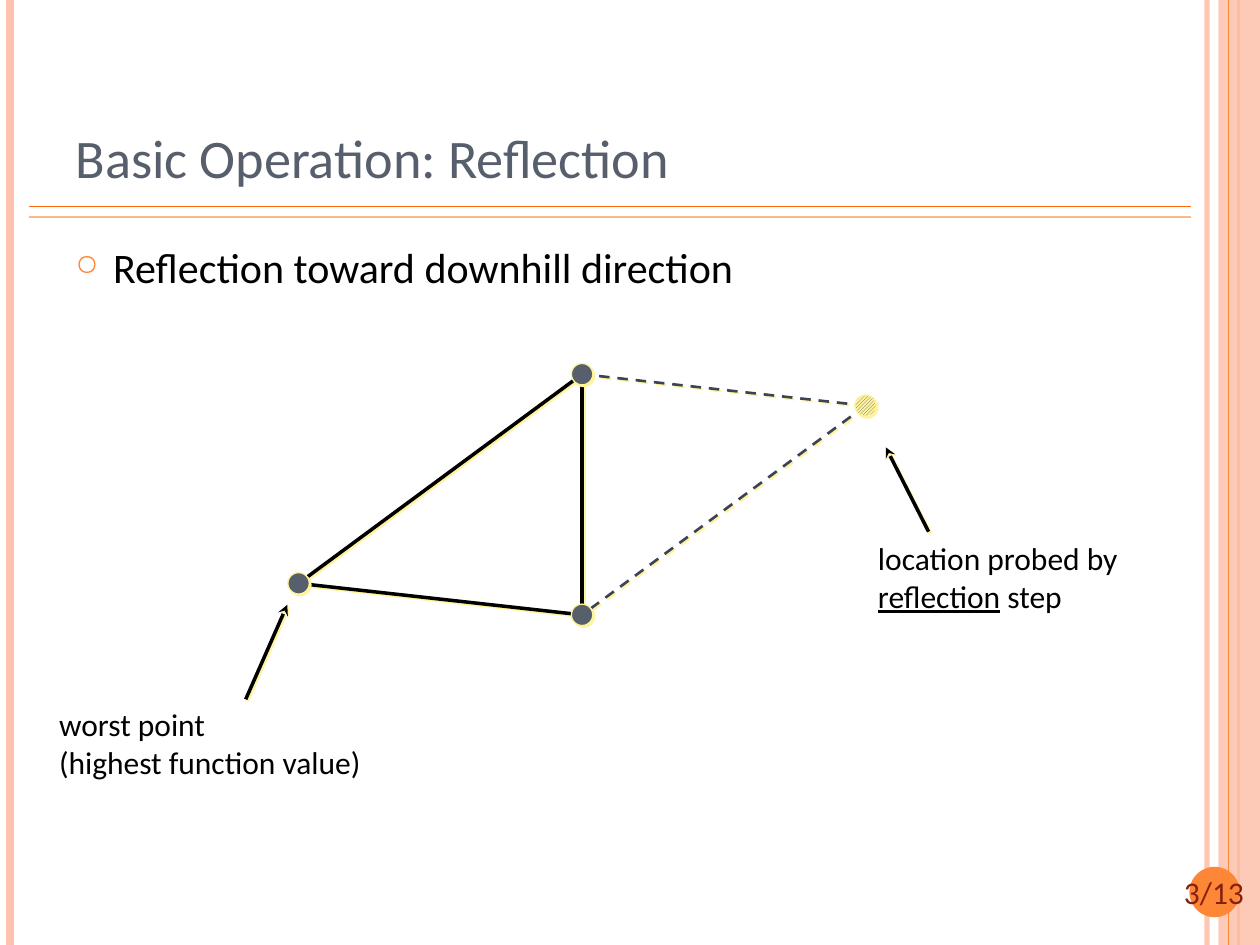
from dataclasses import dataclass

from lxml import etree
from pptx import Presentation
from pptx.dml.color import RGBColor
from pptx.enum.dml import MSO_LINE, MSO_PATTERN
from pptx.enum.shapes import MSO_CONNECTOR, MSO_SHAPE
from pptx.enum.text import MSO_ANCHOR, MSO_AUTO_SIZE, PP_ALIGN
from pptx.oxml.ns import qn
from pptx.util import Inches, Pt

STRAIGHT = MSO_CONNECTOR.STRAIGHT
OVAL, RECTANGLE = MSO_SHAPE.OVAL, MSO_SHAPE.RECTANGLE
DASH = MSO_LINE.DASH
HATCH = MSO_PATTERN.LIGHT_UPWARD_DIAGONAL
LEFT, CENTER = PP_ALIGN.LEFT, PP_ALIGN.CENTER
TOP, BOTTOM = MSO_ANCHOR.TOP, MSO_ANCHOR.BOTTOM

# The slide is a square grid of 100 columns by 75 rows
COLUMNS, ROWS = 100, 75
CELL = Inches(0.1)


@dataclass(frozen=True)
class Theme:
    font: str = "Calibri"
    title_size: float = 31
    body_size: float = 24
    label_size: float = 18
    ink: str = "000000"
    slate: str = "575F6D"
    dashed: str = "3B435B"
    glow: str = "FFF39D"
    orange: str = "FE8637"
    rule_dark: str = "FF6B0A"
    rule_light: str = "FEB687"
    peach: str = "FEC3AE"
    number: str = "862110"


THEME = Theme()


def cells(*values):
    return [round(value * CELL) for value in values]


def color(value):
    return RGBColor.from_string(value)


def set_attributes(target, values):
    for name, value in values.items():
        setattr(target, name, value)


def add_element(parent, tag, **attributes):
    element = etree.SubElement(parent, qn(tag))
    for name, value in attributes.items():
        element.set(name, str(value))
    return element


def set_effects(shape, glow):
    """Give the shape a small hard shadow, or no effect at all."""
    effects = add_element(shape._element.spPr, "a:effectLst")
    if glow:
        shadow = add_element(effects, "a:outerShdw", blurRad=0, dist=Pt(1.4),
                             dir=45 * 60000, algn="ctr", rotWithShape=0)
        add_element(shadow, "a:srgbClr", val=THEME.glow)


def set_opacity(shape, percent):
    fill_color = next(shape._element.spPr.iter(qn("a:srgbClr")))
    add_element(fill_color, "a:alpha", val=percent * 1000)


def add_line(shapes, start, end, line_color, width, dash=None, arrow=False, glow=False):
    line = shapes.add_connector(STRAIGHT, *cells(*start, *end))
    line.line.color.rgb = color(line_color)
    line.line.width = Pt(width)
    if dash:
        line.line.dash_style = dash
    if arrow:
        add_element(line._element.spPr.find(qn("a:ln")), "a:tailEnd", type="stealth")
    set_effects(line, glow)
    return line


def add_solid(shapes, kind, box, fill_color):
    shape = shapes.add_shape(kind, *cells(*box))
    shape.shadow.inherit = False
    shape.fill.solid()
    shape.fill.fore_color.rgb = color(fill_color)
    shape.line.fill.background()
    return shape


def add_vertex(shapes, center, hatched=False):
    size = 1.7
    vertex = shapes.add_shape(
        OVAL, *cells(center[0] - size / 2, center[1] - size / 2, size, size))
    if hatched:
        vertex.fill.patterned()
        vertex.fill.pattern = HATCH
        vertex.fill.back_color.rgb = color(THEME.glow)
    else:
        vertex.fill.solid()
    vertex.fill.fore_color.rgb = color(THEME.slate)
    vertex.line.color.rgb = color(THEME.glow)
    vertex.line.width = Pt(0.75)
    set_effects(vertex, glow=True)


def write_text(shape, lines, size, text_color, align=LEFT, anchor=TOP):
    """Write lines of (text, underlined) runs into one paragraph."""
    set_attributes(shape.text_frame, {
        "word_wrap": True, "auto_size": MSO_AUTO_SIZE.NONE, "vertical_anchor": anchor})
    paragraph = shape.text_frame.paragraphs[0]
    paragraph.alignment = align
    for index, line in enumerate(lines):
        if index:
            paragraph.add_line_break()
        for text, underlined in line:
            run = paragraph.add_run()
            run.text = text
            set_attributes(run.font, {
                "name": THEME.font, "size": Pt(size), "underline": underlined})
            run.font.color.rgb = color(text_color)
    return paragraph


def add_text(shapes, box, lines, size, text_color, align=LEFT):
    return write_text(shapes.add_textbox(*cells(*box)), lines, size, text_color, align)


def add_bullet(paragraph, character):
    properties = paragraph._p.get_or_add_pPr()
    properties.set("marL", str(Inches(0.3)))
    properties.set("indent", str(-Inches(0.3)))
    add_element(add_element(properties, "a:buClr"), "a:srgbClr", val=THEME.orange)
    add_element(properties, "a:buSzPct", val=70000)
    add_element(properties, "a:buChar", char=character)


def add_frame(shapes):
    """Draw the side bands, the title rules and the page number."""
    def vertical(column, line_color, width):
        return add_line(shapes, (column, 0), (column, ROWS), line_color, width)

    set_opacity(vertical(95.8, THEME.peach, 3), 93)
    vertical(0.8, THEME.peach, 4.5)
    vertical(98.3, THEME.orange, 1.5)
    set_opacity(add_solid(shapes, RECTANGLE, (96.7, 0, 3.3, ROWS), THEME.peach), 87)
    vertical(97.5, THEME.orange, 0.75)
    for row, rule_color in ((16.4, THEME.rule_dark), (17.2, THEME.rule_light)):
        add_line(shapes, (2.3, row), (94.5, row), rule_color, 1)
    add_solid(shapes, OVAL, (94.4, 68.8, 4, 4), THEME.orange)
    add_text(shapes, (91.8, 68.8, 9.1, 4), [[("3/13", False)]],
             THEME.label_size, THEME.number, CENTER)


def add_simplex(shapes):
    """Draw the triangle and the worst point mirrored across its far edge."""
    worst, upper, lower = (23.7, 46.3), (46.2, 29.7), (46.2, 48.8)
    reflected = tuple(a + b - c for a, b, c in zip(upper, lower, worst))
    for corner in (lower, upper):
        add_line(shapes, reflected, corner, THEME.dashed, 1.5, dash=DASH, glow=True)
    add_vertex(shapes, reflected, hatched=True)

    triangle = shapes.add_group_shape().shapes
    for start, end in ((worst, upper), (worst, lower), (lower, upper)):
        add_line(triangle, start, end, THEME.ink, 2, glow=True)
    for corner in (lower, worst, upper):
        add_vertex(triangle, corner)


def add_callout(shapes, box, lines, start, end):
    add_text(shapes, box, lines, THEME.label_size, THEME.ink)
    add_line(shapes, start, end, THEME.ink, 2, arrow=True, glow=True)


def main():
    presentation = Presentation()
    presentation.slide_width, presentation.slide_height = cells(COLUMNS, ROWS)
    slide = presentation.slides.add_slide(presentation.slide_layouts[5])
    shapes = slide.shapes
    add_frame(shapes)

    # Title and bullet
    title = shapes.title
    set_attributes(title, dict(zip(("left", "top", "width", "height"),
                                   cells(5, 3, 81.7, 12.5))))
    write_text(title, [[("Basic Operation: Reflection", False)]],
               THEME.title_size, THEME.slate, anchor=BOTTOM)
    bullet = add_text(shapes, (5, 18.7, 81.7, 52.1),
                      [[("Reflection toward downhill direction", False)]],
                      THEME.body_size, THEME.ink)
    add_bullet(bullet, "○")

    # Diagram and its labels
    add_simplex(shapes)
    add_callout(shapes, (3.7, 55.5, 34.5, 9),
                [[("worst point", False)], [("(highest function value)", False)]],
                (19.5, 55.5), (22.8, 48))
    add_callout(shapes, (68.7, 42.3, 28.6, 9),
                [[("location probed by", False)],
                 [("reflection", True), (" step", False)]],
                (73.7, 42.2), (70.3, 35.5))
    presentation.save("out.pptx")


if __name__ == "__main__":
    main()
